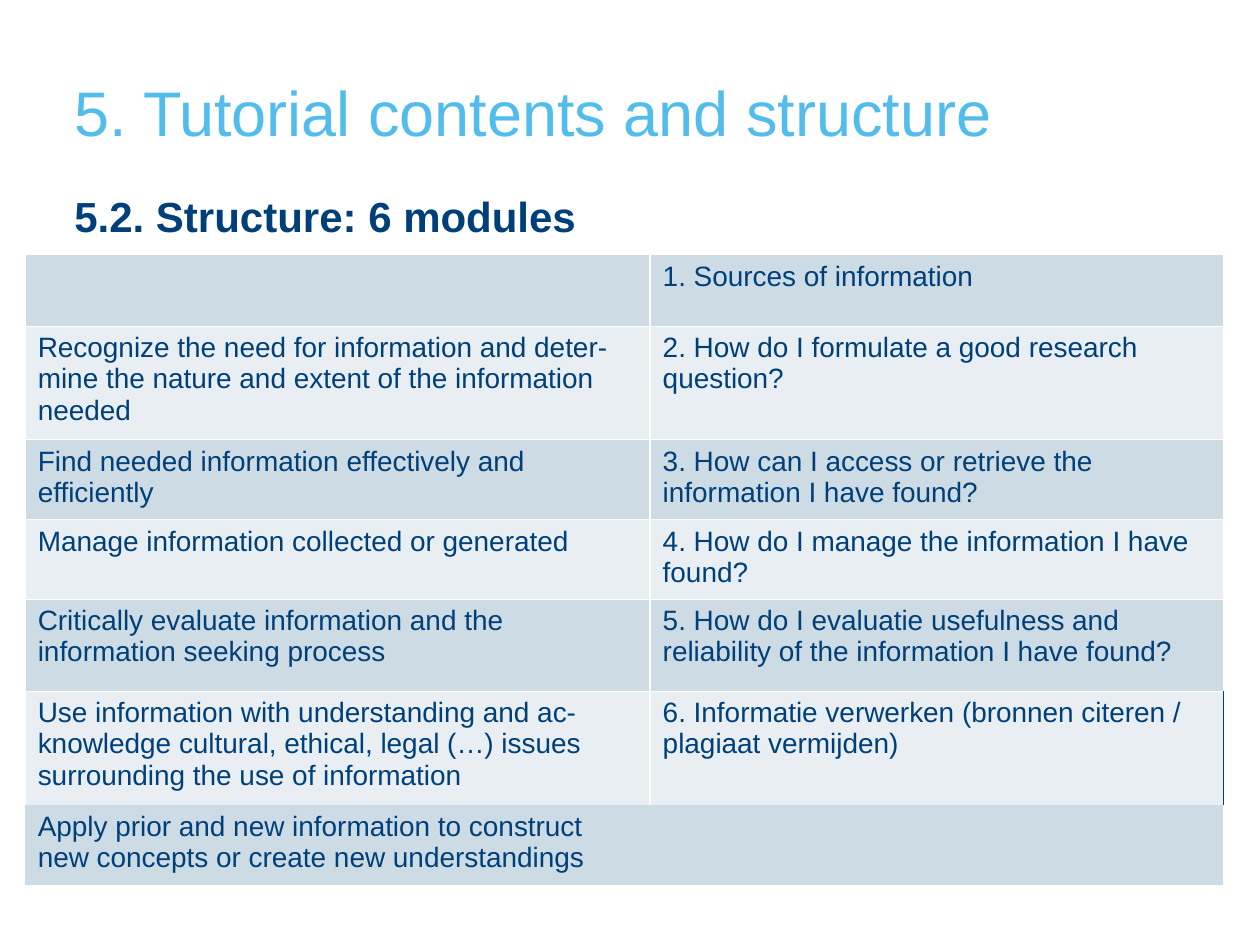
"""Build the tutorial structure slide with its table of six modules."""
from dataclasses import dataclass
from typing import Optional

from lxml import etree
from pptx import Presentation
from pptx.dml.color import RGBColor
from pptx.enum.text import MSO_ANCHOR, PP_ALIGN
from pptx.oxml.ns import qn
from pptx.util import Inches, Pt

LEFT = PP_ALIGN.LEFT
TOP, BOTTOM = MSO_ANCHOR.TOP, MSO_ANCHOR.BOTTOM
SKY = RGBColor(0x52, 0xBD, 0xEC)
NAVY = RGBColor(0x00, 0x40, 0x7A)
WHITE = RGBColor(0xFF, 0xFF, 0xFF)
BANDS = (RGBColor(0xCD, 0xDB, 0xE4), RGBColor(0xE8, 0xEE, 0xF2))
FONT = "Arial"
COLUMN_WIDTHS = (4.96, 4.55)
EDGES = ("lnL", "lnR", "lnT", "lnB")


@dataclass(frozen=True)
class ModuleRow:
    skill: str
    module: str
    height: float


@dataclass(frozen=True)
class Heading:
    text: str
    top: float
    height: float
    size: int
    color: RGBColor
    bold: bool
    anchor: MSO_ANCHOR


TITLE = Heading("5. Tutorial contents and structure", 0.2, 0.98, 36, SKY, False, BOTTOM)
SUBTITLE = Heading("5.2. Structure: 6 modules", 1.51, 0.45, 24, NAVY, True, TOP)
ROWS = (
    ModuleRow("", "1. Sources of information", 0.57),
    ModuleRow("Recognize the need for information and deter-mine the nature and "
              "extent of the information needed",
              "2. How do I formulate a good research question?", 0.65),
    ModuleRow("Find needed information effectively and efficiently",
              "3. How can I access or retrieve the information I have found?", 0.59),
    ModuleRow("Manage information collected or generated",
              "4. How do I manage the information I have found?", 0.59),
    ModuleRow("Critically evaluate information and the information seeking process",
              "5. How do I evaluatie usefulness and reliability of the information "
              "I have found?", 0.73),
    ModuleRow("Use information with understanding and ac-knowledge cultural, ethical, "
              "legal (…) issues surrounding the use of information",
              "6. Informatie verwerken (bronnen citeren / plagiaat vermijden)", 0.67),
    ModuleRow("Apply prior and new information to construct new concepts or create "
              "new understandings", "", 0.46),
)


def write(frame, text: str, size: int, color: RGBColor, bold: bool = False) -> None:
    frame.text = text
    paragraph = frame.paragraphs[0]
    paragraph.alignment = LEFT
    font = paragraph.font
    for name, value in {"name": FONT, "size": Pt(size), "bold": bold}.items():
        setattr(font, name, value)
    font.color.rgb = color


def draw_heading(shape, heading: Heading) -> None:
    place = {"left": 0.59, "top": heading.top, "width": 9.11, "height": heading.height}
    for name, value in place.items():
        setattr(shape, name, Inches(value))
    frame = shape.text_frame
    layout = {"margin_left": 0, "margin_right": 0, "margin_top": 0, "margin_bottom": 0,
              "word_wrap": True, "vertical_anchor": heading.anchor}
    for name, value in layout.items():
        setattr(frame, name, value)
    write(frame, heading.text, heading.size, heading.color, heading.bold)


def set_borders(cell, colors: dict[str, Optional[RGBColor]]) -> None:
    properties = cell._tc.get_or_add_tcPr()
    for index, edge in enumerate(EDGES):
        line = etree.Element(qn(f"a:{edge}"), w=str(Pt(1)))
        color = colors[edge]
        if color is None:
            etree.SubElement(line, qn("a:noFill"))
        else:
            fill = etree.SubElement(line, qn("a:solidFill"))
            etree.SubElement(fill, qn("a:srgbClr"), val=str(color))
        properties.insert(index, line)


def draw_modules(slide, rows: tuple[ModuleRow, ...]) -> None:
    frame = slide.shapes.add_table(
        len(rows), len(COLUMN_WIDTHS), Inches(0.2), Inches(2.02),
        Inches(sum(COLUMN_WIDTHS)), Inches(sum(row.height for row in rows)))
    modules = frame.table
    modules.first_row = modules.horz_banding = False
    for column, width in zip(modules.columns, COLUMN_WIDTHS):
        column.width = Inches(width)
    last = len(rows) - 1
    for index, row in enumerate(rows):
        modules.rows[index].height = Inches(row.height)
        for column, text in enumerate((row.skill, row.module)):
            cell = modules.cell(index, column)
            write(cell.text_frame, text, 16, NAVY)
            cell.fill.solid()
            cell.fill.fore_color.rgb = BANDS[index % 2]
            borders = dict.fromkeys(EDGES, None if index == last else WHITE)
            if index == last - 1:
                borders["lnB"] = None
                if column == 1:
                    borders["lnR"] = NAVY
            set_borders(cell, borders)


def main() -> None:
    deck = Presentation()
    deck.slide_width, deck.slide_height = Inches(10), Inches(7.5)
    slide = deck.slides.add_slide(deck.slide_layouts[5])
    draw_heading(slide.shapes.title, TITLE)
    draw_heading(slide.shapes.add_textbox(0, 0, 0, 0), SUBTITLE)
    draw_modules(slide, ROWS)
    deck.save("out.pptx")


if __name__ == "__main__":
    main()
